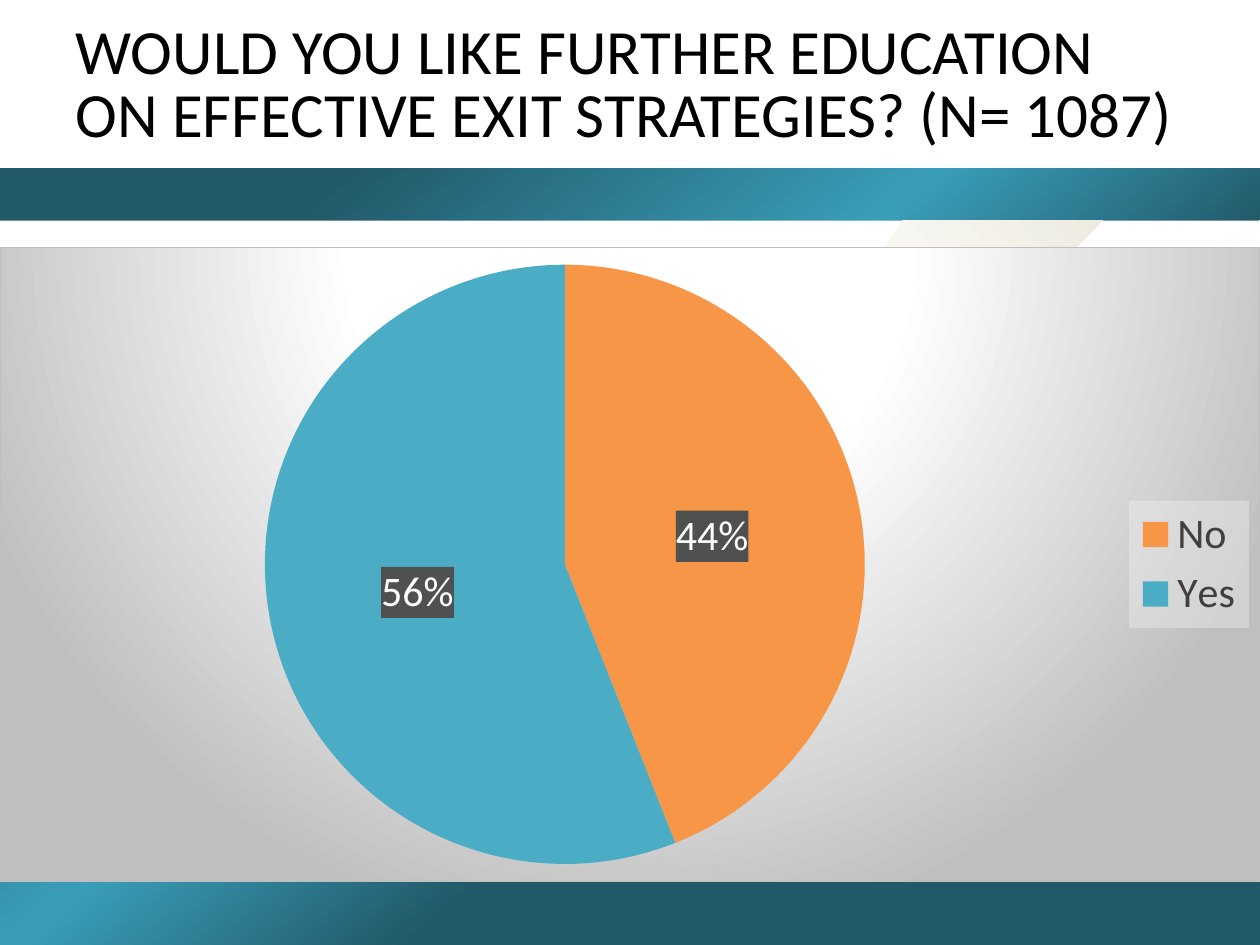
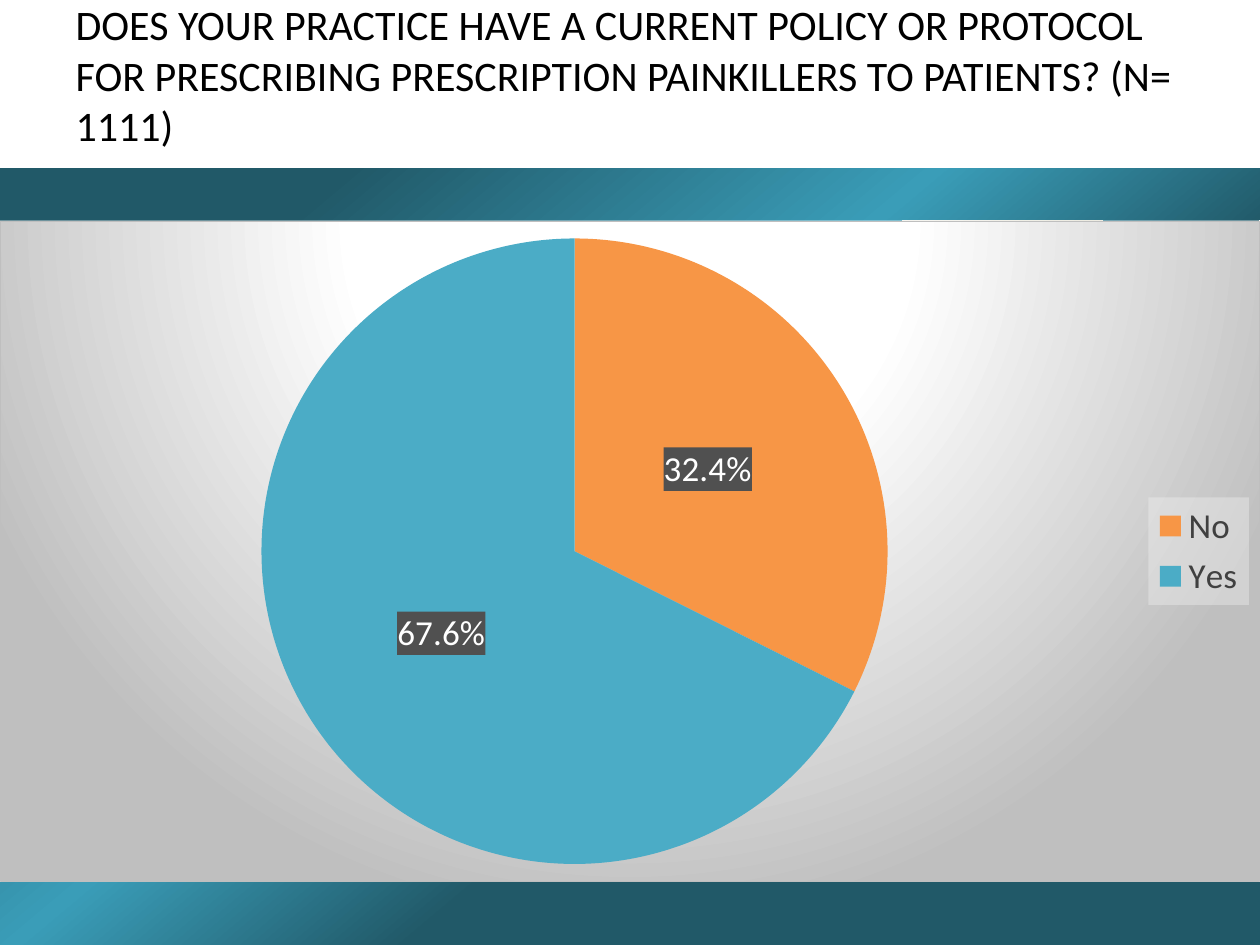
from lxml import etree
from pptx import Presentation
from pptx import util as u
from pptx.chart import data as chart_data
from pptx.dml import color
from pptx.enum import chart as chart_enum, shapes, text
from pptx.oxml import ns

COLOURS = {
    "white": "FFFFFF", "black": "000000", "teal": "215968", "sky": "3A9DB8",
    "cream": "EEECE1", "orange": "F79646", "aqua": "4BACC6",
    "silver": "BFBFBF", "label": "505050", "legend": "F2F2F2", "grey": "404040",
}
FONT = "Calibri"
WIDTH, HEIGHT = 720, 540
BAND_TOP, BODY_TOP, BODY_BOTTOM = 96, 126, 504
BAND_STOPS = [(16, "teal"), (43, "sky"), (61, "teal")]
RAYS = [
    ([(264, 503), (516, 126), (537, 126), (630, 126)],
     [(31, "cream"), (68, "white"), (100, "cream")], 315),
    ([(720, 126), (340, 502), (306, 501), (168, 502)],
     [(0, "cream"), (100, "white")], 270),
    ([(720, 250), (720, 502), (292, 503)],
     [(0, "cream"), (100, "white")], 45),
]
SURVEY = [
    {"question": "WOULD YOU LIKE FURTHER EDUCATION ON EFFECTIVE EXIT STRATEGIES? (N= 1087)",
     "title_size": 36, "line_spacing": u.Pt(36), "top": 141,
     "shares": (0.44, 0.56), "chart_size": 24, "number_format": "0%"},
    {"question": "DOES YOUR PRACTICE HAVE A CURRENT POLICY OR PROTOCOL FOR PRESCRIBING "
                 "PRESCRIPTION PAINKILLERS TO PATIENTS? (N= 1111)",
     "title_size": 24, "line_spacing": None, "top": BODY_TOP,
     "shares": (0.324, 0.676), "chart_size": 20, "number_format": "0.0%"},
]


def rgb(name):
    """Return the named colour."""
    return color.RGBColor.from_string(COLOURS[name])


def set_all(target, **values):
    """Set each given attribute on the target."""
    for name, value in values.items():
        setattr(target, name, value)


def solid_xml(name, alpha=100):
    """Return a solid fill as XML text."""
    return (f'<a:solidFill><a:srgbClr val="{COLOURS[name]}">'
            f'<a:alpha val="{alpha * 1000}"/></a:srgbClr></a:solidFill>')


def gradient_xml(stops, direction):
    """Return a gradient fill as XML text."""
    marks = "".join(f'<a:gs pos="{position * 1000}"><a:srgbClr val="{COLOURS[name]}"/></a:gs>'
                    for position, name in stops)
    return f"<a:gradFill><a:gsLst>{marks}</a:gsLst>{direction}</a:gradFill>"


def fill_chart_part(part, fill):
    """Give a chart part the fill and line in the XML text."""
    properties = etree.fromstring(
        f'<c:spPr {ns.nsdecls("c", "a")}>{fill}</c:spPr>')
    part.find(ns.qn("c:txPr")).addprevious(properties)


class SurveyDeck:
    """Holds the deck style and the current slide."""

    def __init__(self):
        """Start an empty deck."""
        self.deck = Presentation()
        set_all(self.deck, slide_width=u.Pt(WIDTH), slide_height=u.Pt(HEIGHT))
        self.page = None

    def add_page(self):
        """Add a slide with the shared background."""
        self.page = self.deck.slides.add_slide(self.deck.slide_layouts[5])
        band = self.rectangle(BAND_TOP, HEIGHT)
        self.gradient(band, BAND_STOPS, 50)
        self.rectangle(BODY_TOP, BODY_BOTTOM)
        for points, stops, angle in RAYS:
            self.gradient(self.ray(points), stops, angle)

    def plain(self, shape):
        """Remove the shadow and line and fill the shape white."""
        shape.shadow.inherit = False
        shape.line.fill.background()
        shape.fill.solid()
        shape.fill.fore_color.rgb = rgb("white")
        return shape

    def rectangle(self, top, bottom):
        """Add a full-width rectangle."""
        return self.plain(self.page.shapes.add_shape(
            shapes.MSO_SHAPE.RECTANGLE, 0, u.Pt(top), u.Pt(WIDTH), u.Pt(bottom - top)))

    def ray(self, points):
        """Add a closed outline through the points."""
        builder = self.page.shapes.build_freeform(*points[0], scale=u.Pt(1))
        builder.add_line_segments(points[1:], close=True)
        return self.plain(builder.convert_to_shape())

    def gradient(self, shape, stops, angle):
        """Replace the solid fill of a shape by a linear gradient."""
        fill = gradient_xml(stops, f'<a:lin ang="{angle * 60000}" scaled="0"/>')
        holder = etree.fromstring(f'<a:fill {ns.nsdecls("a")}>{fill}</a:fill>')
        solid = shape.element.spPr.find(ns.qn("a:solidFill"))
        solid.getparent().replace(solid, holder[0])

    def style_font(self, font, size, colour):
        """Format a font."""
        set_all(font, name=FONT, size=u.Pt(size), bold=False)
        font.color.rgb = rgb(colour)

    def title(self, question, size, line_spacing):
        """Place and format the slide title."""
        box = self.page.shapes.title
        set_all(box, left=u.Pt(36), top=u.Pt(21.6), width=u.Pt(648), height=u.Pt(67.7))
        set_all(box.text_frame, text=question, word_wrap=True,
                auto_size=text.MSO_AUTO_SIZE.NONE,
                vertical_anchor=text.MSO_ANCHOR.BOTTOM)
        para = box.text_frame.paragraphs[0]
        set_all(para, alignment=text.PP_ALIGN.LEFT, line_spacing=line_spacing)
        self.style_font(para.runs[0].font, size, "black")

    def pie(self, shares, top, size, number_format):
        """Add the pie chart of answers."""
        answers = chart_data.CategoryChartData(number_format=number_format)
        answers.categories = ["No", "Yes"]
        answers.add_series("Series 1", shares)
        chart = self.page.shapes.add_chart(
            chart_enum.XL_CHART_TYPE.PIE, 0, u.Pt(top), u.Pt(WIDTH),
            u.Pt(BODY_BOTTOM - top), answers).chart
        set_all(chart, has_title=False, has_legend=True)
        self.style_font(chart.font, size, "black")
        set_all(chart.legend, position=chart_enum.XL_LEGEND_POSITION.RIGHT,
                include_in_layout=False)
        self.style_font(chart.legend.font, size, "grey")
        chart.plots[0].vary_by_categories = True
        series = chart.plots[0].series[0]
        for index, name in enumerate(("orange", "aqua")):
            wedge = series.points[index].format
            wedge.fill.solid()
            wedge.fill.fore_color.rgb = rgb(name)
            wedge.line.fill.background()
        labels = series.data_labels
        set_all(labels, show_value=True, number_format=number_format,
                number_format_is_linked=False,
                position=chart_enum.XL_LABEL_POSITION.CENTER)
        self.style_font(labels.font, size, "white")
        glow = gradient_xml(
            [(0, "white"), (39, "white"), (100, "silver")],
            '<a:path path="circle"><a:fillToRect l="50000" t="-80000" r="50000" b="180000"/></a:path>')
        border = f'<a:ln w="9525">{solid_xml("silver")}</a:ln>'
        root = chart.element
        fill_chart_part(root, glow + border)
        fill_chart_part(root.find(".//" + ns.qn("c:legend")), solid_xml("legend", 39))
        fill_chart_part(root.find(".//" + ns.qn("c:dLbls")), solid_xml("label"))


def main():
    """Build and save the survey slides."""
    survey = SurveyDeck()
    for item in SURVEY:
        survey.add_page()
        survey.title(item["question"], item["title_size"], item["line_spacing"])
        survey.pie(item["shares"], item["top"], item["chart_size"], item["number_format"])
    survey.deck.save("out.pptx")


if __name__ == "__main__":
    main()
